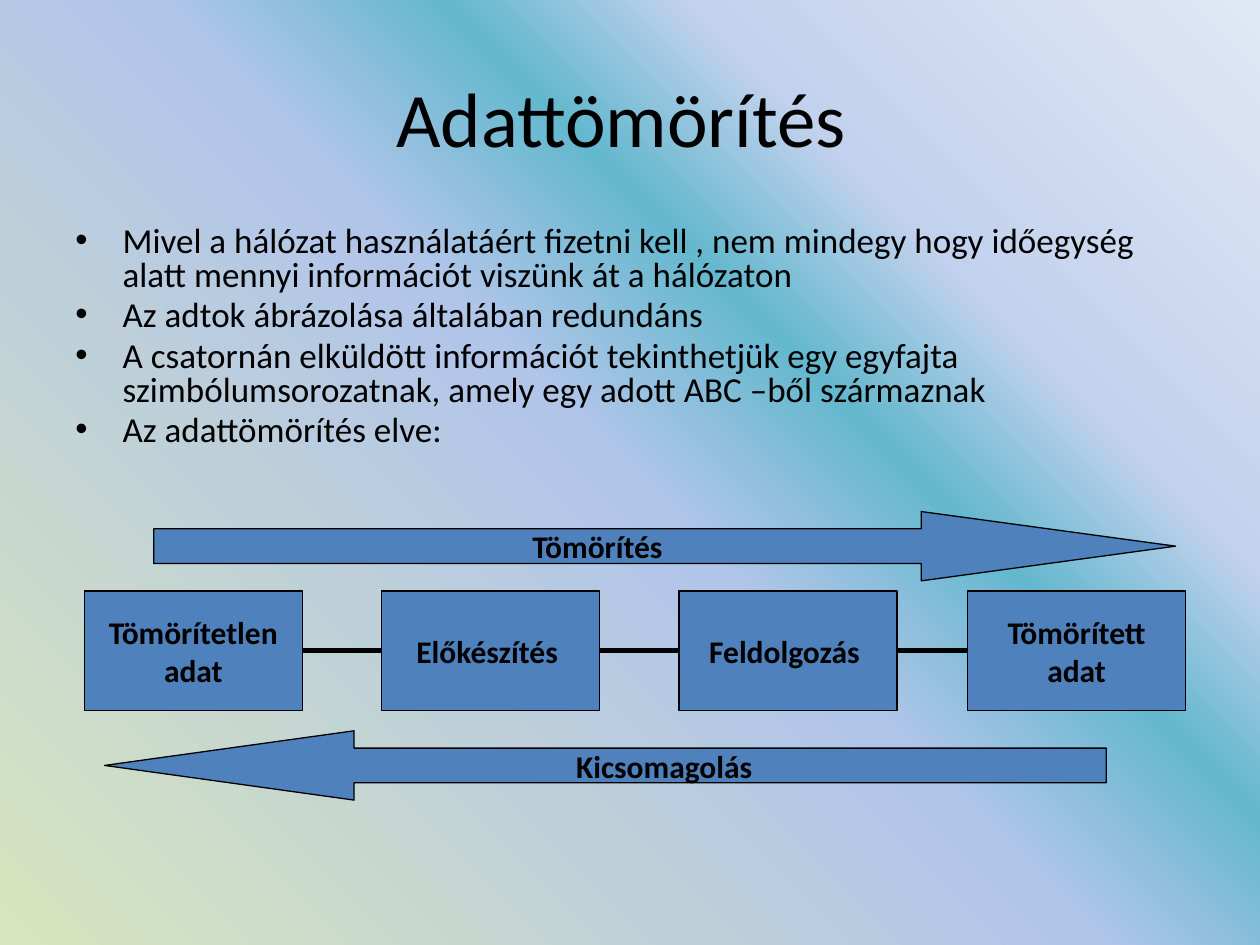
from copy import deepcopy
from lxml.etree import SubElement
from pptx import Presentation
from pptx.dml.color import RGBColor
from pptx.enum.shapes import MSO_CONNECTOR, MSO_SHAPE
from pptx.enum.text import MSO_ANCHOR, PP_ALIGN
from pptx.oxml.ns import qn
from pptx.util import Inches, Pt

BLACK = RGBColor(0x00, 0x00, 0x00)
BLUE = RGBColor(0x4F, 0x81, 0xBD)
GRADIENT = [
    (0, RGBColor(0xD7, 0xE4, 0xBD)),
    (0.5, RGBColor(0xB1, 0xC5, 0xE9)),
    (0.63, RGBColor(0x64, 0xB8, 0xCE)),
    (0.74, RGBColor(0xC2, 0xD1, 0xED)),
    (1, RGBColor(0xE1, 0xE8, 0xF5)),
]

prs = Presentation()
prs.slide_width, prs.slide_height = Inches(10), Inches(7.5)
COL, ROW = prs.slide_width / 100, prs.slide_height / 75
s = prs.slides.add_slide(prs.slide_layouts[6])


def grid(x, y, w, h):
    return [int(v) for v in (x * COL, y * ROW, w * COL, h * ROW)]


def write(sp, *texts, size=18, bold=False, align=PP_ALIGN.CENTER,
          anchor=MSO_ANCHOR.MIDDLE, wrap=True, bullet=False):
    tf = sp.text_frame
    tf.word_wrap = wrap
    tf.vertical_anchor = anchor
    for i, text in enumerate(texts):
        p = tf.add_paragraph() if i else tf.paragraphs[0]
        p.text = text
        p.alignment = align
        for r in p.runs:
            r.font.name = "Calibri"
            r.font.size = Pt(size)
            r.font.bold = bold
            r.font.color.rgb = BLACK
        if bullet:
            p.line_spacing = 0.8
            p.space_before = Pt(size * 0.2)
            pPr = p._p.get_or_add_pPr()
            pPr.set("marL", str(int(3.75 * COL)))
            pPr.set("indent", str(int(-3.75 * COL)))
            SubElement(pPr, qn("a:buFont"), typeface="Arial")
            SubElement(pPr, qn("a:buChar"), char="•")


fill = s.background.fill
fill.gradient()
fill.gradient_angle = 45
stops = s._element.find(".//" + qn("a:gsLst"))
for _ in GRADIENT[2:]:
    stops.append(deepcopy(stops[0]))
for stop, (position, color) in zip(fill.gradient_stops, GRADIENT):
    stop.position = position
    stop.color.rgb = color

write(s.shapes.add_textbox(*grid(5, 3, 90, 12.5)), "Adattömörítés ", size=44)
write(
    s.shapes.add_textbox(*grid(5, 17.5, 90, 20)),
    "Mivel a hálózat használatáért fizetni kell , nem mindegy hogy időegység "
    "alatt mennyi információt viszünk át a hálózaton",
    "Az adtok ábrázolása általában redundáns",
    "A csatornán elküldött információt tekinthetjük egy egyfajta "
    "szimbólumsorozatnak, amely egy adott ABC –ből származnak",
    "Az adattömörítés elve:",
    size=20, align=PP_ALIGN.LEFT, anchor=MSO_ANCHOR.TOP, bullet=True,
)

BOX_TOP, BOX_W, BOX_H = 46.9, 17.3, 9.5
lefts = [6.7, 30.3, 53.9, 76.8]
labels = ["Tömörítetlen\nadat", "Előkészítés ", "Feldolgozás ", "Tömörített\nadat"]
shapes = [
    (MSO_SHAPE.FLOWCHART_PROCESS, label, (left, BOX_TOP, BOX_W, BOX_H), [])
    for left, label in zip(lefts, labels)
]
shapes += [
    (MSO_SHAPE.RIGHT_ARROW, "Tömörítés ", (12.2, 40.6, 81.1, 5.5), [0.5, 3.67]),
    (MSO_SHAPE.LEFT_ARROW, "Kicsomagolás ", (8.3, 58, 79.5, 5.5), [0.5, 3.6]),
]
for kind, label, place, adjustments in shapes:
    sp = s.shapes.add_shape(kind, *grid(*place))
    for i, value in enumerate(adjustments):
        sp.adjustments[i] = value
    sp.shadow.inherit = False
    sp.fill.solid()
    sp.fill.fore_color.rgb = BLUE
    sp.line.color.rgb = BLACK
    sp.line.width = Pt(0.75)
    write(sp, label, bold=True, wrap=False)

middle = BOX_TOP + BOX_H / 2
for left, following in zip(lefts, lefts[1:]):
    line = s.shapes.add_connector(
        MSO_CONNECTOR.STRAIGHT, *grid(left + BOX_W, middle, following, middle))
    line.line.color.rgb = BLACK
    line.line.width = Pt(3)
    SubElement(line._element.spPr, qn("a:effectLst"))

prs.save("out.pptx")
